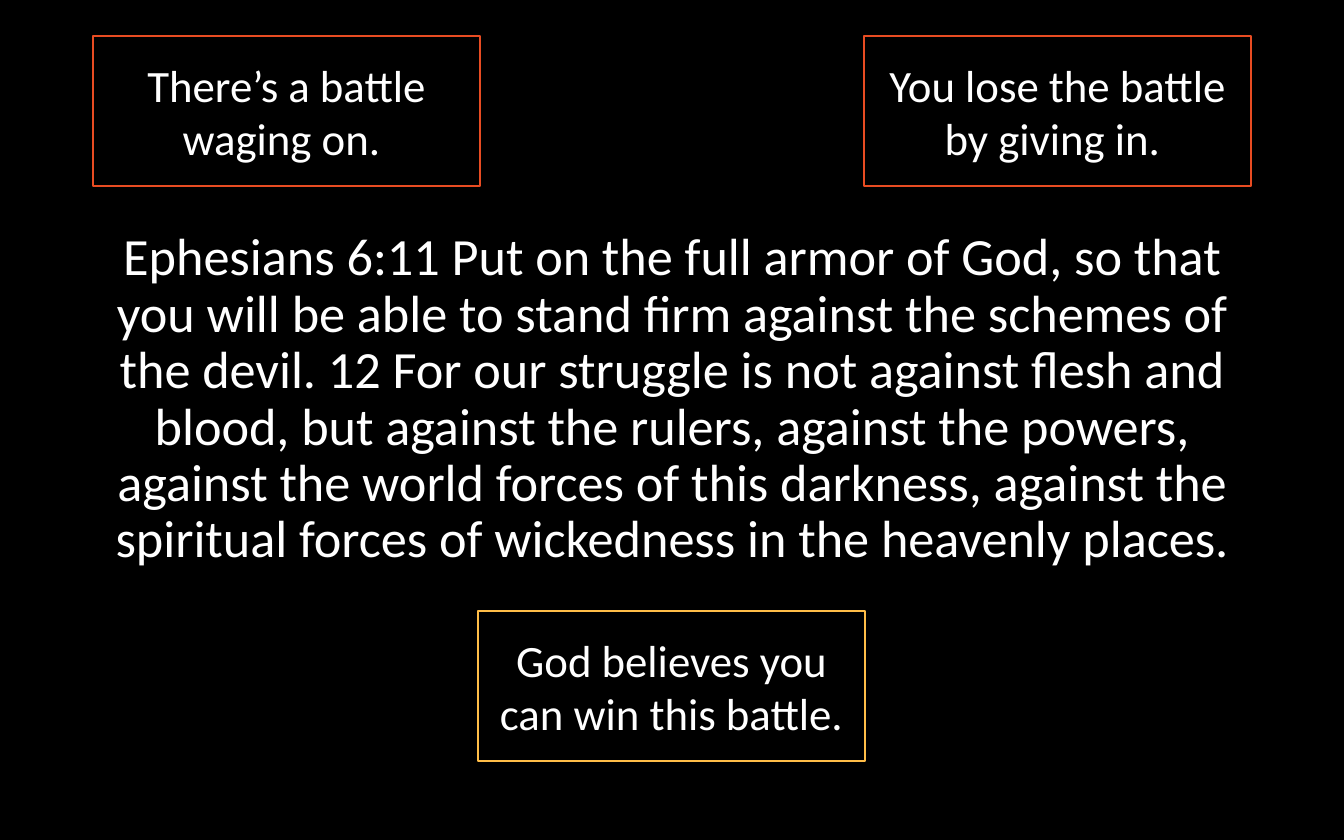
from pptx import Presentation
from pptx.dml.color import RGBColor
from pptx.enum import shapes, text
from pptx.oxml.ns import qn
from pptx.util import Emu, Pt
from lxml import etree

COLORS = {"bg": "000000", "text": "FFFFFF", "red": "E84C22", "gold": "FFBD47"}
SLIDE_W, SLIDE_H = 1344, 840
SCALE = 9144000 / SLIDE_W


def px(n):
    return Emu(round(n * SCALE))


def write(tf, words, size):
    for name, value in {"word_wrap": True, "auto_size": text.MSO_AUTO_SIZE.NONE,
                        "vertical_anchor": text.MSO_ANCHOR.MIDDLE}.items():
        setattr(tf, name, value)
    p = tf.paragraphs[0]
    p.alignment = text.PP_ALIGN.CENTER
    r = p.add_run()
    r.text = words
    for name, value in {"name": "Calibri", "size": Pt(size)}.items():
        setattr(r.font, name, value)
    r.font.color.rgb = RGBColor.from_string(COLORS["text"])
    return p


prs = Presentation()
prs.slide_width, prs.slide_height = px(SLIDE_W), px(SLIDE_H)
s = prs.slides.add_slide(prs.slide_layouts[1])
s.background.fill.solid()
s.background.fill.fore_color.rgb = RGBColor.from_string(COLORS["bg"])

# The slide has no title
title = s.shapes.title
title.element.getparent().remove(title.element)

# Scripture passage, without a bullet and set a little above the middle
body = s.placeholders[1]
for name, value in {"left": 93, "top": 153, "width": 1158, "height": 534}.items():
    setattr(body, name, px(value))
tf = body.text_frame
tf.margin_bottom = px(47)
p = write(tf, "Ephesians 6:11 Put on the full armor of God, so that you will be able to "
          "stand firm against the schemes of the devil. 12 For our struggle is not "
          "against flesh and blood, but against the rulers, against the powers, against "
          "the world forces of this darkness, against the spiritual forces of wickedness "
          "in the heavenly places.", 28)
p.line_spacing = 0.9
p.space_before = Pt(0)
pPr = p._p.get_or_add_pPr()
pPr.set("marL", "0")
pPr.set("indent", "0")
etree.SubElement(pPr, qn("a:buNone"))

# Outlined statements: left, right and bottom centre
BOX_W, BOX_H, EDGE = 387, 150, 93
statements = [
    (EDGE, 36, "red", "There’s a battle waging on. "),
    (SLIDE_W - EDGE - BOX_W, 36, "red", "You lose the battle by giving in. "),
    ((SLIDE_W - BOX_W) // 2, 611, "gold", "God believes you can win this battle."),
]
for left, top, color, words in statements:
    sp = s.shapes.add_shape(shapes.MSO_SHAPE.RECTANGLE, px(left), px(top), px(BOX_W), px(BOX_H))
    sp.shadow.inherit = False
    sp.fill.background()
    sp.line.color.rgb = RGBColor.from_string(COLORS[color])
    sp.line.width = Pt(0.75)
    write(sp.text_frame, words, 24)

prs.save("out.pptx")
